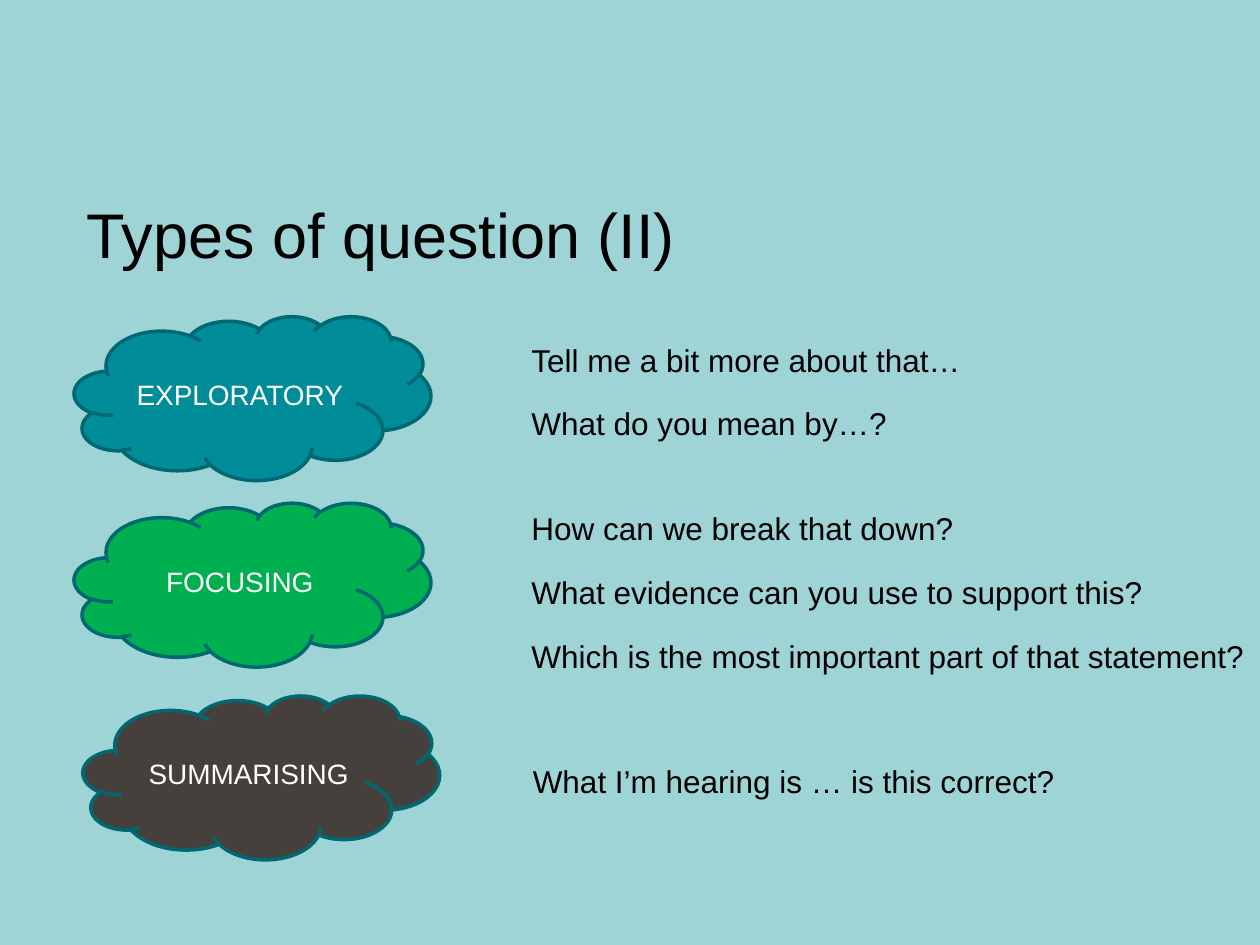
import pptx
import pptx.util
import pptx.dml.color
import pptx.enum.shapes
import pptx.enum.text

Inches = pptx.util.Inches
Pt = pptx.util.Pt
Anchor = pptx.enum.text.MSO_ANCHOR
Align = pptx.enum.text.PP_ALIGN

HUES = {
    "back": "9FD4D7",
    "edge": "006871",
    "teal": "008C99",
    "green": "00B050",
    "brown": "46403C",
    "black": "000000",
    "white": "FFFFFF",
}


def hue(name):
    return pptx.dml.color.RGBColor.from_string(HUES[name])


def write(shape, lines, size=18, color="black", align=Align.LEFT,
          anchor=Anchor.TOP, wrap=True, gap=0):
    frame = shape.text_frame
    frame.word_wrap = wrap
    frame.vertical_anchor = anchor
    if not wrap:
        frame.auto_size = pptx.enum.text.MSO_AUTO_SIZE.SHAPE_TO_FIT_TEXT
    for i, line in enumerate(lines):
        para = frame.add_paragraph() if i else frame.paragraphs[0]
        para.alignment = align
        if i:
            para.space_before = Pt(gap)
        run = para.add_run()
        run.text = line
        run.font.name = "Arial"
        run.font.size = Pt(size)
        run.font.color.rgb = hue(color)


deck = pptx.Presentation()
deck.slide_width = Inches(10)
deck.slide_height = Inches(7.5)
slide = deck.slides.add_slide(deck.slide_layouts[6])
slide.background.fill.solid()
slide.background.fill.fore_color.rgb = hue("back")

title = slide.shapes.add_textbox(Inches(0.59), Inches(1.46), Inches(9), Inches(0.79))
write(title, ["Types of question (II)"], size=36, anchor=Anchor.MIDDLE)

clouds = [
    ("EXPLORATORY", "teal", 0.59, 2.51),
    ("FOCUSING", "green", 0.59, 3.99),
    ("SUMMARISING", "brown", 0.66, 5.52),
]
for label, color, left, top in clouds:
    cloud = slide.shapes.add_shape(
        pptx.enum.shapes.MSO_SHAPE.CLOUD,
        Inches(left), Inches(top), Inches(2.83), Inches(1.3))
    cloud.shadow.inherit = False
    cloud.fill.solid()
    cloud.fill.fore_color.rgb = hue(color)
    cloud.line.color.rgb = hue("edge")
    cloud.line.width = Pt(2)
    write(cloud, [label], size=16, color="white", align=Align.CENTER,
          anchor=Anchor.MIDDLE)

prompts = [
    (4.12, 2.66, 3.74, 0.89, 14,
     ["Tell me a bit more about that…", "What do you mean by…?"]),
    (4.12, 3.99, 6.14, 1.41, 15,
     ["How can we break that down?",
      "What evidence can you use to support this?",
      "Which is the most important part of that statement?"]),
    (4.13, 6, 4.39, 0.4, 0, ["What I’m hearing is … is this correct?"]),
]
for left, top, width, height, gap, lines in prompts:
    box = slide.shapes.add_textbox(
        Inches(left), Inches(top), Inches(width), Inches(height))
    write(box, lines, wrap=False, gap=gap)

deck.save("out.pptx")
